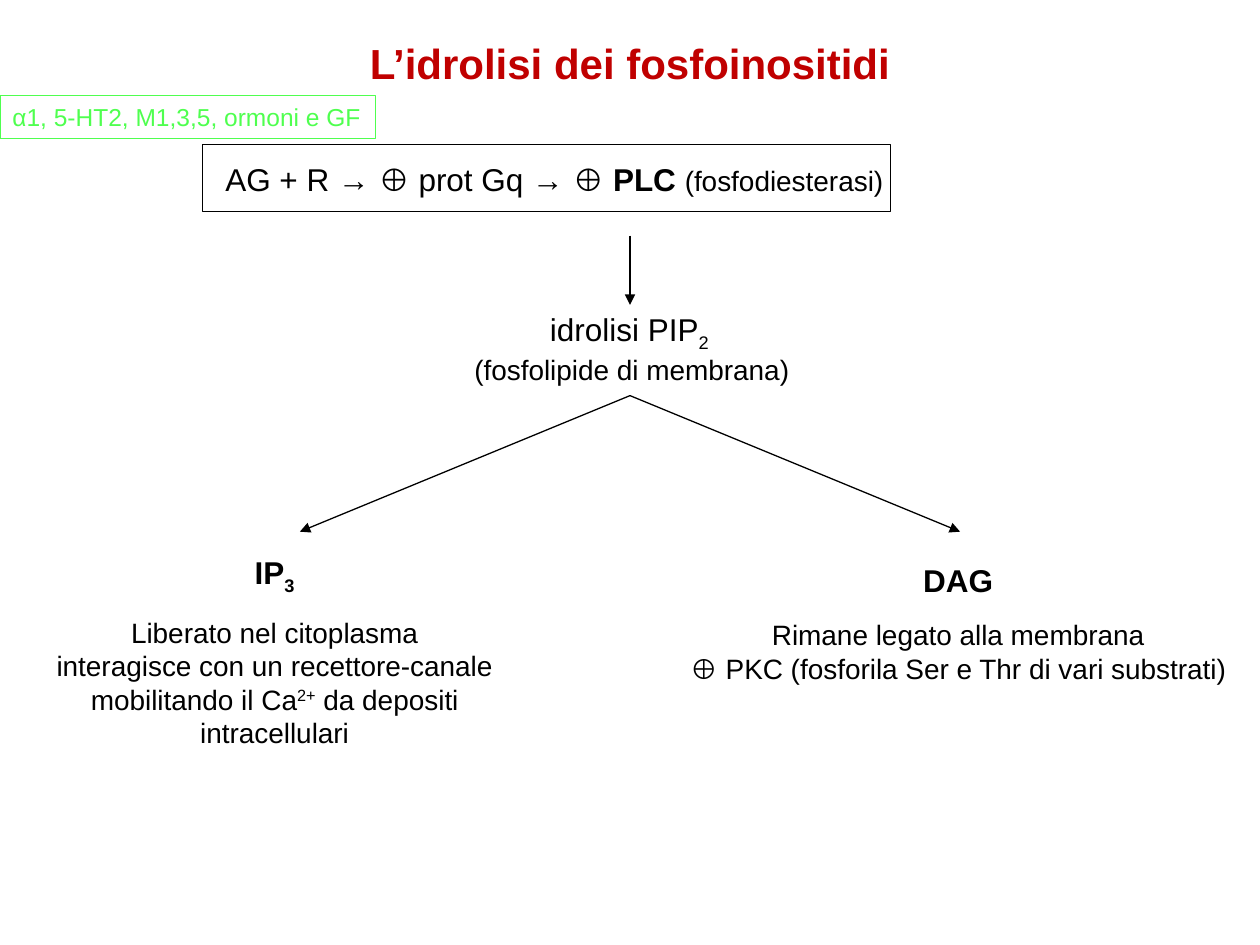
from lxml.etree import SubElement
from pptx import Presentation
from pptx.dml.color import RGBColor
from pptx.enum.shapes import MSO_CONNECTOR, MSO_SHAPE
from pptx.enum.text import MSO_ANCHOR, MSO_AUTO_SIZE, PP_ALIGN
from pptx.oxml.ns import qn
from pptx.util import Inches, Pt

THEME = {
    "font": "Arial",
    "black": RGBColor(0, 0, 0),
    "red": RGBColor(0xC0, 0, 0),
    "green": RGBColor(0x4F, 0xFF, 0x4F),
    "title": 24, "heading": 18, "body": 16, "label": 14,
    "line": 0.75, "gap": 11,
}

TITLE = "L’idrolisi dei fosfoinositidi"
RECEPTORS = "α1, 5-HT2, M1,3,5, ormoni e GF"
RECEPTOR_FRAME = (0, 0.76, 2.98, 0.34)
PATHWAY_FRAME = (1.61, 1.15, 5.46, 0.53)

# Each paragraph is a list of spans: (text, size name, bold, baseline percent)
PATHWAY = [[("AG + R → ⊕ prot Gq → ⊕ ", "heading", False, 0),
            ("PLC ", "heading", True, 0),
            ("(fosfodiesterasi)", "body", False, 0)]]
HYDROLYSIS = [[("idrolisi PIP", "heading", False, 0), ("2 ", "heading", False, -25)],
              [("(fosfolipide di membrana)", "body", False, 0)]]
IP3 = [[("IP", "heading", True, 0), ("3", "heading", True, -25)],
       [("Liberato nel citoplasma", "body", False, 0)],
       [("interagisce con un recettore-canale mobilitando il Ca", "body", False, 0),
        ("2+", "body", False, 30),
        (" da depositi intracellulari", "body", False, 0)]]
DAG = [[("DAG", "heading", True, 0)],
       [("Rimane legato alla membrana", "body", False, 0)],
       [("⊕ PKC (fosforila Ser e Thr di vari substrati)", "body", False, 0)]]

# (paragraphs, frame, alignment, wraps, gap below heading)
TEXTS = [
    (PATHWAY, (1.69, 1.22, 6.93, 0.4), PP_ALIGN.LEFT, True, False),
    (HYDROLYSIS, (3.65, 2.41, 2.73, 0.67), PP_ALIGN.CENTER, False, False),
    (IP3, (0.1, 4.34, 4.16, 1.64), PP_ALIGN.CENTER, True, True),
    (DAG, (5.21, 4.4, 4.79, 1.1), PP_ALIGN.CENTER, True, True),
]

CENTRE, BRANCH_REACH = 5, 2.62
ARROWS = [((CENTRE, 1.87), (CENTRE, 2.42))] + [
    ((CENTRE, 3.14), (CENTRE + side * BRANCH_REACH, 4.22)) for side in (-1, 1)]


def inches(values):
    return [Inches(value) for value in values]


def style_span(span, size, color, bold=False, baseline=0):
    span.font.name = THEME["font"]
    span.font.size = Pt(THEME[size])
    span.font.bold = bold
    span.font.color.rgb = THEME[color]
    if baseline:
        span.font._element.set("baseline", str(baseline * 1000))


def add_text(slide, paragraphs, frame, alignment, wraps, gap):
    text_frame = slide.shapes.add_textbox(*inches(frame)).text_frame
    text_frame.word_wrap = wraps
    text_frame.auto_size = MSO_AUTO_SIZE.SHAPE_TO_FIT_TEXT
    for index, spans in enumerate(paragraphs):
        para = text_frame.add_paragraph() if index else text_frame.paragraphs[0]
        para.alignment = alignment
        if gap and index == 1:
            para.space_before = Pt(THEME["gap"])
        for text, size, bold, baseline in spans:
            span = para.add_run()
            span.text = text
            style_span(span, size, "black", bold, baseline)


def add_outline(slide, frame, color):
    box = slide.shapes.add_shape(MSO_SHAPE.RECTANGLE, *inches(frame))
    box.shadow.inherit = False
    box.fill.background()
    box.line.color.rgb = THEME[color]
    box.line.width = Pt(THEME["line"])
    return box


def add_arrow(slide, start, end):
    arrow = slide.shapes.add_connector(MSO_CONNECTOR.STRAIGHT, *inches(start + end))
    arrow.line.color.rgb = THEME["black"]
    arrow.line.width = Pt(THEME["line"])
    SubElement(arrow.line._get_or_add_ln(), qn("a:tailEnd"), type="triangle")
    SubElement(arrow._element.spPr, qn("a:effectLst"))


def add_title(slide):
    title = slide.shapes.title
    title.left, title.top, title.width, title.height = inches((0.5, 0.15, 9, 0.69))
    title.text_frame.text = TITLE
    title.text_frame.vertical_anchor = MSO_ANCHOR.MIDDLE
    para = title.text_frame.paragraphs[0]
    para.alignment = PP_ALIGN.CENTER
    style_span(para.runs[0], "title", "red", bold=True)


def add_receptors(slide):
    text_frame = add_outline(slide, RECEPTOR_FRAME, "green").text_frame
    text_frame.word_wrap = False
    text_frame.auto_size = MSO_AUTO_SIZE.SHAPE_TO_FIT_TEXT
    text_frame.vertical_anchor = MSO_ANCHOR.TOP
    text_frame.text = RECEPTORS
    para = text_frame.paragraphs[0]
    para.alignment = PP_ALIGN.LEFT
    style_span(para.runs[0], "label", "green")


def main():
    deck = Presentation()
    deck.slide_width, deck.slide_height = inches((10, 7.5))
    slide = deck.slides.add_slide(deck.slide_layouts[5])
    add_title(slide)
    for text in TEXTS:
        add_text(slide, *text)
    add_outline(slide, PATHWAY_FRAME, "black")
    for start, end in ARROWS:
        add_arrow(slide, start, end)
    add_receptors(slide)
    deck.save("out.pptx")


if __name__ == "__main__":
    main()
